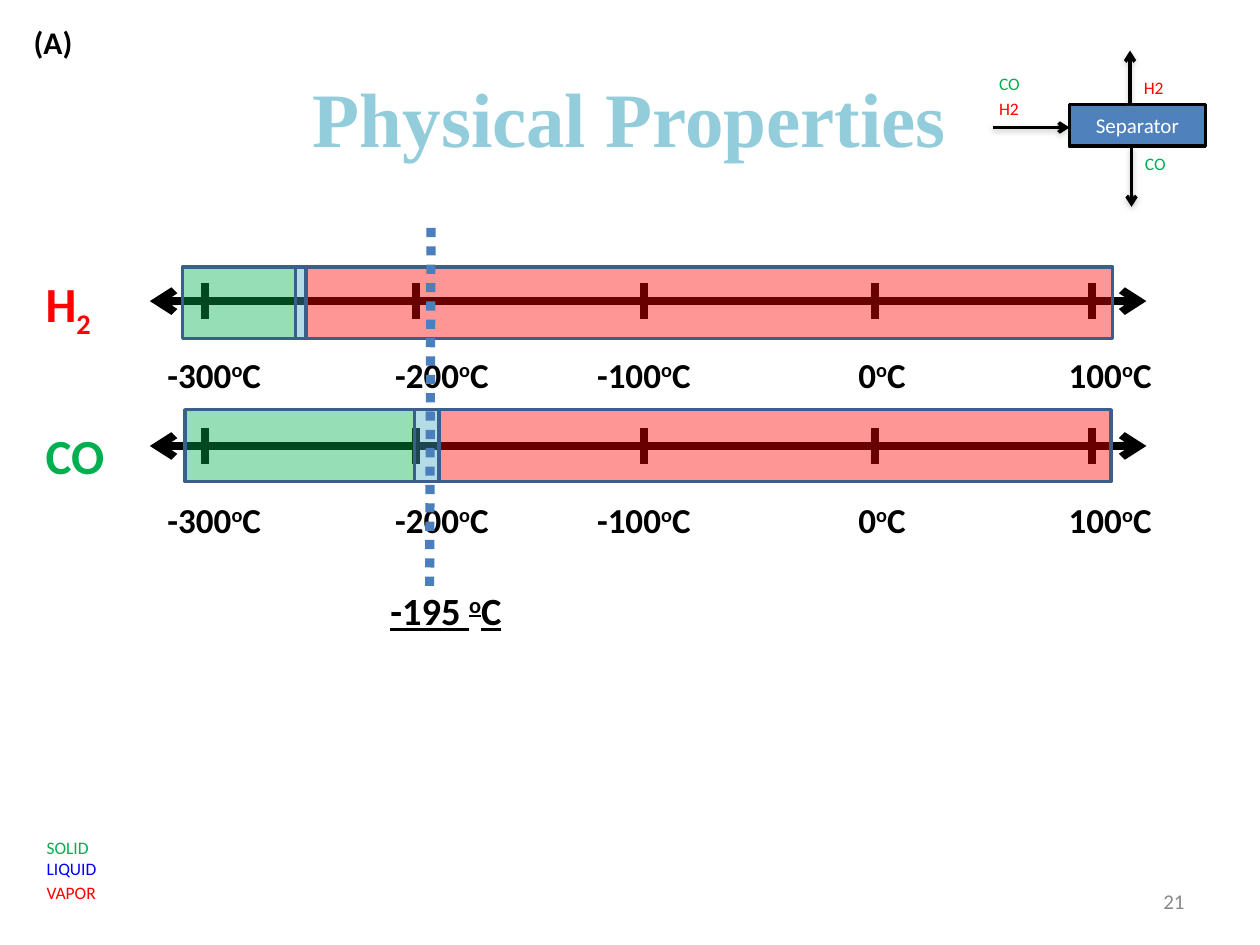
from lxml import etree
from pptx import Presentation
from pptx import util as u
from pptx.dml.color import RGBColor
from pptx.enum import dml, shapes, text
from pptx.oxml.ns import qn

BLACK, WHITE, GREY = "000000", "FFFFFF", "898989"
RED, GREEN, BLUE, TEAL = "FF0000", "00B050", "0000FF", "4BACC6"
LEFT, CENTER, RIGHT = text.PP_ALIGN.LEFT, text.PP_ALIGN.CENTER, text.PP_ALIGN.RIGHT
TOP, MIDDLE = text.MSO_ANCHOR.TOP, text.MSO_ANCHOR.MIDDLE


def rgb(hex_color):
    return RGBColor.from_string(hex_color)


def sub(parent, tag, **attrs):
    return etree.SubElement(parent, qn(tag), {k: str(v) for k, v in attrs.items()})


def add_run(p, content, size=10, color=BLACK, font="Calibri", bold=False,
            underline=False, base=0):
    r = p.add_run()
    r.text = content
    f = r.font
    f.size, f.name, f.bold, f.underline = u.Pt(size), font, bold, underline
    f.color.rgb = rgb(color)
    if base:
        r.font._element.set("baseline", str(base * 1000))


def degrees(number):
    return [(number, 0), ("o", 30), ("C", 0)]


class Canvas:
    """Current slide and its style; all lengths are in centimetres."""

    outline = "3A5F8C"

    def __init__(self, s):
        self.s = s

    def fill_text(self, sp, runs, align=LEFT, anchor=TOP, wrap=True, **fmt):
        tf = sp.text_frame
        tf.word_wrap, tf.vertical_anchor = wrap, anchor
        p = tf.paragraphs[0]
        p.alignment = align
        for content, base in runs:
            add_run(p, content, base=base, **fmt)
        return tf

    def text(self, x, y, w, h, runs, **fmt):
        if isinstance(runs, str):
            runs = [(runs, 0)]
        sp = self.s.shapes.add_textbox(u.Cm(x), u.Cm(y), u.Cm(w), u.Cm(h))
        return self.fill_text(sp, runs, **fmt)

    def more(self, tf, content, before=0, **fmt):
        p = tf.add_paragraph()
        p.space_before = u.Pt(before)
        add_run(p, content, **fmt)

    def rect(self, x, y, w, h, fill, line=outline, opacity=None):
        sp = self.s.shapes.add_shape(shapes.MSO_SHAPE.RECTANGLE,
                                     u.Cm(x), u.Cm(y), u.Cm(w), u.Cm(h))
        sp.shadow.inherit = False
        sp.fill.solid()
        sp.fill.fore_color.rgb = rgb(fill)
        sp.line.color.rgb = rgb(line)
        sp.line.width = u.Pt(2)
        if opacity:
            clr = sp.element.spPr.find(qn("a:solidFill")).find(qn("a:srgbClr"))
            sub(clr, "a:alpha", val=opacity * 1000)
        return sp

    def line(self, x1, y1, x2, y2, width=4.5, color=BLACK, ends=(), dash=None,
             shadow=False):
        cx = self.s.shapes.add_connector(shapes.MSO_CONNECTOR.STRAIGHT,
                                         u.Cm(x1), u.Cm(y1), u.Cm(x2), u.Cm(y2))
        cx.line.color.rgb = rgb(color)
        cx.line.width = u.Pt(width)
        if dash:
            cx.line.dash_style = dash
        spPr = cx.element.spPr
        for end in ends:
            sub(spPr.find(qn("a:ln")), f"a:{end}End", type="arrow")
        effects = sub(spPr, "a:effectLst")
        if shadow:
            outer = sub(effects, "a:outerShdw", blurRad=u.Pt(3.1), dist=u.Pt(1.6),
                        dir=5400000, rotWithShape=0)
            sub(sub(outer, "a:srgbClr", val="808080"), "a:alpha", val=38000)

    def scale(self, y):
        """Temperature axis with ticks and labels, centred on height y."""
        self.line(3.02, y, 23.11, y, ends=("head", "tail"))
        ticks = [("-300", 4.14, 4.32), ("-200", 8.38, 8.91), ("-100", 12.98, 12.98),
                 ("0", 17.63, 17.78), ("100", 22.02, 22.38)]
        for number, x, label_x in ticks:
            self.line(x, y - 0.37, x, y + 0.37)
            self.text(label_x - 1.65, y + 0.79, 3.3, 1.37, degrees(number), size=20,
                      bold=True, align=CENTER, anchor=MIDDLE)

    def phases(self, y, edges):
        """Solid, liquid and vapor bands between four edges."""
        for fill, x1, x2 in zip((GREEN, TEAL, RED), edges, edges[1:]):
            self.rect(x1, y, x2 - x1, 1.45, fill, opacity=41)


def main():
    prs = Presentation()
    prs.slide_width, prs.slide_height = u.Cm(25.4), u.Cm(19.05)
    c = Canvas(prs.slides.add_slide(prs.slide_layouts[6]))

    # Title and panel letter
    c.text(1.27, 0.76, 22.86, 3.18, "Physical Properties", size=44, bold=True,
           color="93CDDC", font="Times New Roman", align=CENTER, anchor=MIDDLE)
    c.text(0.43, 0.33, 1.47, 1.02, "(A)", size=18, bold=True)

    # Temperature scales with phase bands
    c.scale(6.07)
    c.scale(8.99)
    c.text(0.64, 5.38, 1.47, 1.45, [("H", 0), ("2", -25)], size=28, bold=True,
           color=RED, align=CENTER, wrap=False)
    c.text(-0.38, 8.38, 3.78, 1.57, "CO", size=28, bold=True, color=GREEN,
           align=CENTER, anchor=MIDDLE)
    c.phases(5.38, (3.68, 5.96, 6.17, 22.43))
    c.phases(8.26, (3.73, 8.36, 8.85, 22.4))

    # Operating temperature
    c.line(8.66, 11.81, 8.69, 4.45, width=5.25, color="4B7EBC",
           dash=dml.MSO_LINE.ROUND_DOT)
    c.text(7.62, 11.71, 2.97, 1.19, degrees("-195 "), size=22, bold=True,
           underline=True)

    # Phase legend
    legend = c.text(0.69, 16.74, 2.97, 1.63, "SOLID", color=GREEN)
    c.more(legend, "LIQUID", color=BLUE)
    c.more(legend, "VAPOR", before=2, color=RED)

    # Separator diagram
    box = c.rect(21.56, 2.11, 2.74, 0.84, "4F81BD", line=BLACK)
    c.fill_text(box, [("Separator", 0)], size=12, color=WHITE, align=CENTER,
                anchor=MIDDLE)
    for ends in ((22.81, 2.97, 22.81, 4.17), (22.78, 2.11, 22.78, 1.02),
                 (20.02, 2.57, 21.56, 2.57)):
        c.line(*ends, width=2, ends=("tail",), shadow=True)
    c.text(22.83, 2.97, 1.3, 0.69, "CO", color=GREEN)
    c.text(22.81, 1.42, 1.47, 0.69, "H2", color=RED)
    feed = c.text(19.89, 1.35, 1.93, 1.63, "CO", color=GREEN)
    c.more(feed, "H2", before=2, color=RED)

    # Page number
    c.text(18.21, 17.65, 5.92, 1.02, "21", size=12, color=GREY, align=RIGHT,
           anchor=MIDDLE)

    prs.save("out.pptx")


if __name__ == "__main__":
    main()
